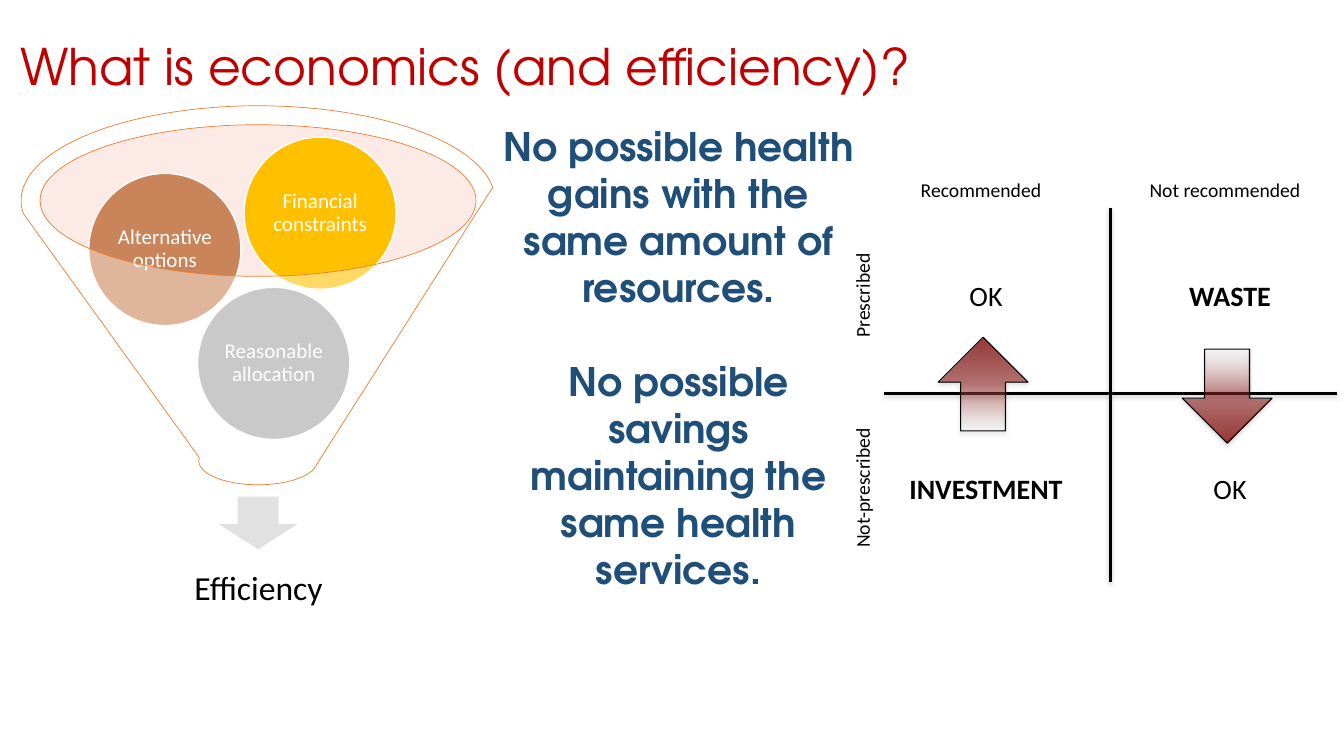
from dataclasses import dataclass

from lxml import etree
from pptx import Presentation
from pptx.dml.color import RGBColor
from pptx.enum.shapes import MSO_CONNECTOR, MSO_SHAPE
from pptx.enum.text import MSO_ANCHOR, PP_ALIGN
from pptx.oxml import parse_xml
from pptx.oxml.ns import nsdecls, qn
from pptx.util import Inches, Pt

ELLIPSE, FUNNEL, DOWN = MSO_SHAPE.OVAL, MSO_SHAPE.FUNNEL, MSO_SHAPE.DOWN_ARROW
STRAIGHT = MSO_CONNECTOR.STRAIGHT
CENTER, LEFT = PP_ALIGN.CENTER, PP_ALIGN.LEFT
TOP, MIDDLE = MSO_ANCHOR.TOP, MSO_ANCHOR.MIDDLE


@dataclass(frozen=True)
class Theme:
    """Colours, fonts and type sizes of the slide."""
    head_font: str = "TeX Gyre Adventor"
    body_font: str = "Calibri"
    title: str = "C00000"
    statement: str = "1F4E79"
    ink: str = "000000"
    white: str = "FFFFFF"
    rim: str = "ED7D31"
    mouth: str = "F6CCBE"
    outlet: str = "E1E1E1"
    gray: str = "A5A5A5"
    brown: str = "CA845A"
    gold: str = "FFC000"
    wine: str = "800000"
    shadow: str = "808080"
    title_size: float = 36
    statement_size: float = 28
    result_size: float = 24
    cell_size: float = 20
    ball_size: float = 15
    label_size: float = 14


T = Theme()


def write(sp, paragraphs, size, color, font=T.body_font, bold=False, align=CENTER,
          anchor=MIDDLE, spacing=None, gap=0, inset=None):
    """Fill a shape with uniformly formatted paragraphs."""
    tf = sp.text_frame
    tf.text = "\n".join(paragraphs)
    tf.word_wrap = True
    tf.vertical_anchor = anchor
    if inset is not None:
        tf.margin_left = tf.margin_right = tf.margin_top = tf.margin_bottom = Inches(inset)
    for i, p in enumerate(tf.paragraphs):
        p.alignment = align
        if spacing:
            p.line_spacing = spacing
        if i:
            p.space_before = Pt(gap)
        for r in p.runs:
            r.font.name, r.font.size, r.font.bold = font, Pt(size), bold
            r.font.color.rgb = RGBColor.from_string(color)


def add_text(s, box, paragraphs, size, color, rotation=0, **style):
    """Add a text box in the given box."""
    sp = s.shapes.add_textbox(*map(Inches, box))
    sp.rotation = rotation
    write(sp, paragraphs, size, color, **style)


def add_shape(s, kind, box, fill=None, line=None, width=1, alpha=None):
    """Add a preset shape with a plain fill and outline."""
    sp = s.shapes.add_shape(kind, *map(Inches, box))
    sp.shadow.inherit = False
    if fill:
        sp.fill.solid()
        sp.fill.fore_color.rgb = RGBColor.from_string(fill)
    if alpha:
        clr = sp.fill._xPr.find(qn("a:solidFill"))[0]
        etree.SubElement(clr, qn("a:alpha")).set("val", str(alpha * 1000))
    if line:
        sp.line.color.rgb = RGBColor.from_string(line)
        sp.line.width = Pt(width)
    else:
        sp.line.fill.background()
    return sp


def cast_shadow(sp, alpha, distance):
    """Give a shape a soft shadow straight below it."""
    props = sp._element.spPr
    for old in props.findall(qn("a:effectLst")):
        props.remove(old)
    props.append(parse_xml(
        f'<a:effectLst {nsdecls("a")}><a:outerShdw blurRad="{Pt(3.1)}" dist="{Pt(distance)}" '
        f'dir="5400000" rotWithShape="0"><a:srgbClr val="{T.shadow}">'
        f'<a:alpha val="{alpha * 1000}"/></a:srgbClr></a:outerShdw></a:effectLst>'))


def add_axis(s, x1, y1, x2, y2):
    """Add one shadowed axis of the matrix."""
    cn = s.shapes.add_connector(STRAIGHT, *map(Inches, (x1, y1, x2, y2)))
    cn.line.color.rgb = RGBColor.from_string(T.ink)
    cn.line.width = Pt(2.25)
    cast_shadow(cn, 38, 1.6)


def add_fading_arrow(s, cx, cy, rotation):
    """Add a block arrow that darkens towards its tip."""
    w, h = 0.89, 0.93
    sp = add_shape(s, DOWN, (cx - w / 2, cy - h / 2, w, h), T.white, T.ink, 0.75)
    sp.rotation = rotation
    stops = "".join(
        f'<a:gs pos="{pos * 1000}"><a:srgbClr val="{color}">'
        f'<a:alpha val="{alpha * 1000}"/></a:srgbClr></a:gs>'
        for pos, color, alpha in ((0, T.white, 25), (50, T.wine, 50), (100, T.wine, 75)))
    props = sp._element.spPr
    props.replace(props.find(qn("a:solidFill")), parse_xml(
        f'<a:gradFill {nsdecls("a")} rotWithShape="1"><a:gsLst>{stops}</a:gsLst>'
        f'<a:lin ang="5400000" scaled="0"/></a:gradFill>'))
    cast_shadow(sp, 35, 1.8)


def add_funnel(s, box):
    """Draw the funnel that turns three inputs into efficiency."""
    x, y, w, h = box
    mid = x + w / 2
    add_shape(s, ELLIPSE, (x + 0.18, y + 0.19, 4.33, 1.5), T.mouth, alpha=40)
    add_shape(s, DOWN, (mid - 0.42, y + 3.87, 0.84, 0.54), T.outlet, T.white)
    add_text(s, (mid - 2.01, y + 4.29, 4.03, 1.01), ["Efficiency"], T.result_size, T.ink,
             spacing=0.9, inset=0.19)
    for dx, dy, color, label in ((1.75, 1.8, T.gray, "Reasonable allocation"),
                                 (0.67, 0.67, T.brown, "Alternative options"),
                                 (2.21, 0.31, T.gold, "Financial constraints")):
        ball = add_shape(s, ELLIPSE, (x + dx, y + dy, 1.51, 1.51), color, T.white)
        write(ball, [label], T.ball_size, T.white, spacing=0.9, inset=0.02)
    add_shape(s, FUNNEL, (x, y, w, 3.76), T.white, T.rim, 0.5, alpha=40)


def add_matrix(s, box):
    """Draw the two-by-two matrix of prescribed against recommended care."""
    x, y, w, h = box
    rows = (y + 1.29, y + 3.2)
    cols = (x + 1.52, x + 3.94)

    def label(cx, cy, text, size, width=2.1, height=0.48, **style):
        add_text(s, (cx - width / 2, cy - height / 2, width, height), [text], size, T.ink, **style)

    for cx, text in zip(cols, ("Recommended", "Not recommended")):
        label(cx - 0.05, y + 0.24, text, T.label_size)
    add_axis(s, x + 0.51, y + 2.26, x + w, y + 2.26)
    add_axis(s, x + 2.75, y + h, x + 2.75, y + 0.42)
    for cy, text in zip(rows, ("Prescribed", "Not-prescribed")):
        label(x + 0.29, cy, text, T.label_size, 1.46, 0.57, rotation=270)
    for cy, texts in zip(rows, (("OK", "WASTE"), ("INVESTMENT", "OK"))):
        for cx, text in zip(cols, texts):
            label(cx, cy, text, T.cell_size, bold=text != "OK")
    for cx, dy, rotation in zip(cols, (2.17, 2.29), (180, 0)):
        add_fading_arrow(s, cx - 0.03, y + dy, rotation)


def add_title(s, box):
    """Add the slide title."""
    add_text(s, box, ["What is economics (and efficiency)?"], T.title_size, T.title,
             font=T.head_font, align=LEFT, anchor=TOP)


def add_statements(s, box):
    """Add the two statements that define efficiency."""
    add_text(s, box, ["No possible health gains with the same amount of resources.",
                      "No possible savings maintaining the same health services."],
             T.statement_size, T.statement, font=T.head_font, bold=True, anchor=TOP, gap=33.6)


def main():
    """Build and save the slide."""
    prs = Presentation()
    prs.slide_width, prs.slide_height = Inches(13.33), Inches(7.5)
    s = prs.slides.add_slide(prs.slide_layouts[6])
    add_funnel(s, (0.21, 1.05, 4.7, 5.3))
    add_title(s, (0.1, 0.3, 13.11, 0.71))
    add_statements(s, (4.86, 1.16, 3.74, 4.81))
    add_matrix(s, (8.26, 1.64, 5, 4.13))
    prs.save("out.pptx")


if __name__ == "__main__":
    main()
